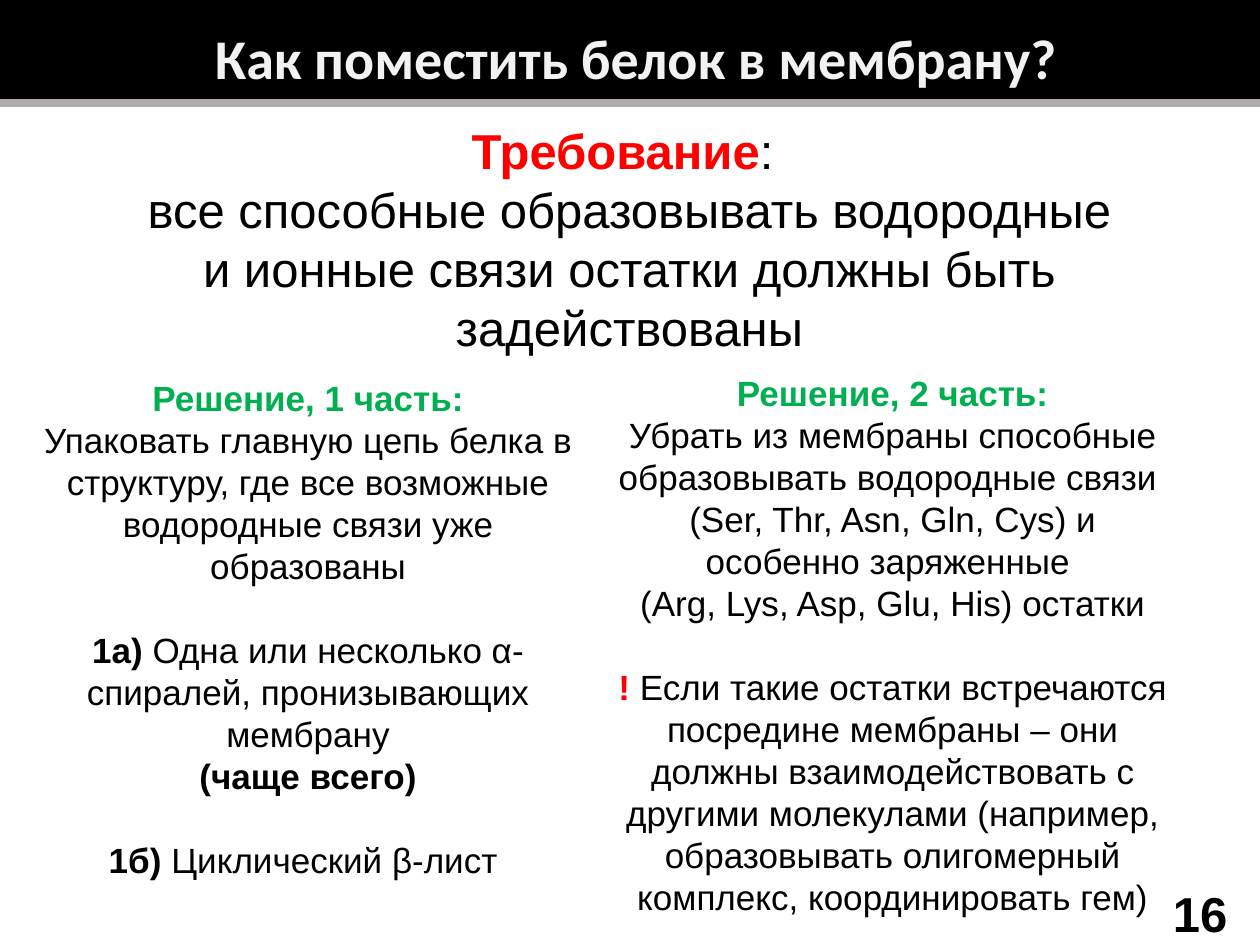
from lxml import etree
from pptx import Presentation
from pptx import util as u
from pptx.dml.color import RGBColor
from pptx.enum import shapes, text
from pptx.oxml import ns

COLORS = {"black": "000000", "title": "F2F2F2", "rule": "AFABAB",
          "red": "FF0000", "green": "00B050"}


class Deck:
    font = "Arial"

    def __init__(self, width, height):
        self.prs = Presentation()
        self.prs.slide_width = u.Inches(width)
        self.prs.slide_height = u.Inches(height)
        self.s = self.prs.slides.add_slide(self.prs.slide_layouts[5])

    def color(self, name):
        return RGBColor.from_string(COLORS[name])

    def box(self, at):
        return [u.Inches(v) for v in at]

    def bar(self, at, color):
        sp = self.s.shapes.add_shape(shapes.MSO_SHAPE.RECTANGLE, *self.box(at))
        sp.shadow.inherit = False
        sp.fill.solid()
        sp.fill.fore_color.rgb = self.color(color)
        sp.line.fill.background()
        tree = self.s.shapes.title.element
        tree.addprevious(sp.element)

    def rule(self, start, end, color, width):
        ln = self.s.shapes.add_connector(
            shapes.MSO_CONNECTOR.STRAIGHT, *self.box(start + end))
        ln.line.color.rgb = self.color(color)
        ln.line.width = u.Pt(width)
        etree.SubElement(ln.element.spPr, ns.qn("a:effectLst"))

    def title(self, at, words, size):
        sp = self.s.shapes.title
        sp.left, sp.top, sp.width, sp.height = self.box(at)
        tf = sp.text_frame
        tf.auto_size = text.MSO_AUTO_SIZE.NONE
        tf.vertical_anchor = text.MSO_ANCHOR.MIDDLE
        tf.margin_left = tf.margin_right = tf.margin_bottom = 0
        tf.margin_top = u.Inches(0.04)
        tf.text = words
        p = tf.paragraphs[0]
        p.alignment = text.PP_ALIGN.CENTER
        p.font.name, p.font.size, p.font.bold = "Calibri", u.Pt(size), True
        p.font.color.rgb = self.color("title")

    def text(self, at, paragraphs, size):
        tf = self.s.shapes.add_textbox(*self.box(at)).text_frame
        tf.word_wrap = True
        for i, (before, runs) in enumerate(paragraphs):
            p = tf.add_paragraph() if i else tf.paragraphs[0]
            p.alignment = text.PP_ALIGN.CENTER
            p.space_before = u.Pt(before)
            p.font.name, p.font.size = self.font, u.Pt(size)
            for words, bold, color in runs:
                r = p.add_run()
                r.text = words
                r.font.bold = bold
                r.font.color.rgb = self.color(color)


def plain(words):
    return words, False, "black"


def bold(words, color="black"):
    return words, True, color


def main():
    d = Deck(10, 7.5)
    gap = 24
    d.bar((0, 0, 10, 0.81), "black")
    d.title((0.55, 0.15, 9, 0.56), "Как поместить белок в мембрану?", 32)
    d.text((9.13, 6.96, 0.79, 0.54), [(5.6, [bold("16")])], 28)
    d.text((0.98, 0.91, 8.03, 1.99), [
        (0, [bold("Требование", "red"), plain(": ")]),
        (0, [plain("все способные образовывать водородные и ионные связи "
                   "остатки должны быть задействованы")]),
    ], 28)
    d.text((0.12, 2.94, 4.65, 4.14), [
        (0, [bold("Решение, 1 часть:", "green")]),
        (0, [plain("Упаковать главную цепь белка в структуру, где все "
                   "возможные водородные связи уже образованы")]),
        (gap, [bold("1а) "), plain("Одна или несколько α-спиралей, "
                                   "пронизывающих мембрану")]),
        (0, [bold("(чаще всего)")]),
        (gap, [bold("1б) "), plain("Циклический β-лист ")]),
    ], 20)
    d.rule((10, 0.82), (0, 0.82), "rule", 4.75)
    d.text((4.76, 2.9, 4.65, 4.48), [
        (0, [bold("Решение, 2 часть:", "green")]),
        (0, [plain("Убрать из мембраны способные образовывать "
                   "водородные связи ")]),
        (0, [plain("(Ser, Thr, Asn, Gln, Cys) и особенно заряженные ")]),
        (0, [plain("(Arg, Lys, Asp, Glu, His) остатки")]),
        (gap, [bold("! ", "red"),
               plain("Если такие остатки встречаются посредине мембраны – "
                     "они должны взаимодействовать с другими молекулами "
                     "(например, образовывать олигомерный комплекс, "
                     "координировать гем)")]),
    ], 20)
    d.prs.save("out.pptx")


if __name__ == "__main__":
    main()
